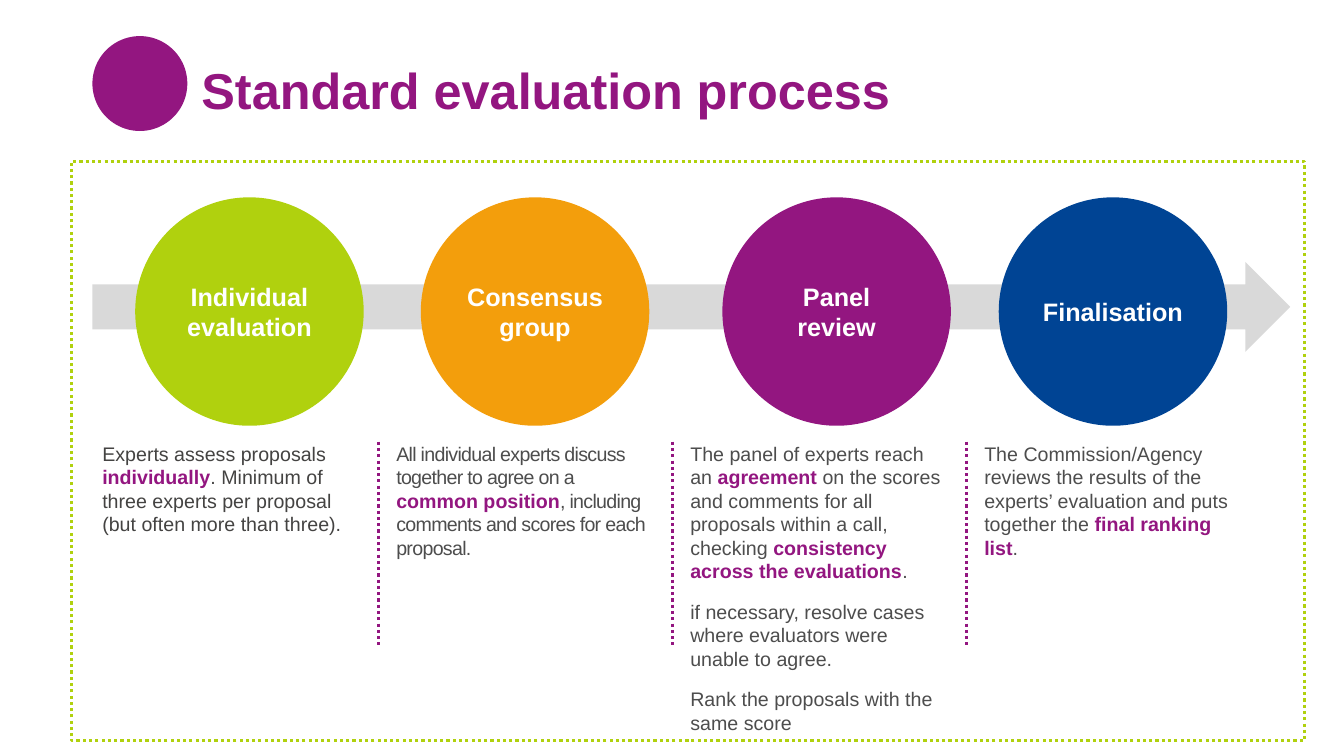
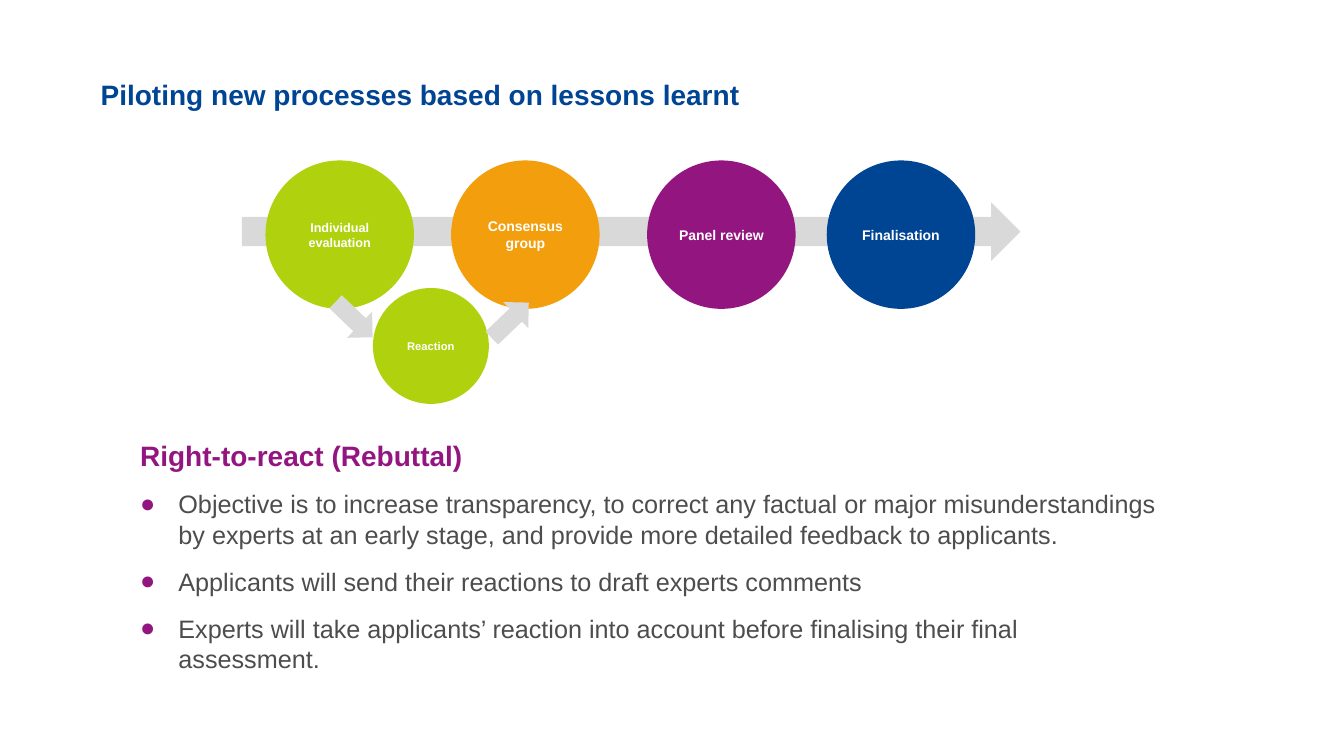
from lxml.etree import SubElement
from pptx import Presentation
from pptx.dml.color import RGBColor
from pptx.enum.dml import MSO_LINE_DASH_STYLE as Dash
from pptx.enum.shapes import MSO_CONNECTOR as Connector, MSO_SHAPE as Shape
from pptx.enum.text import MSO_ANCHOR as Anchor, PP_ALIGN as Align
from pptx.oxml.ns import qn
from pptx.util import Inches, Pt

COLUMNS = 160
FONT = "Arial"
LIME, ORANGE, PURPLE, BLUE = "B0D10E", "F39E0C", "931680", "004494"
GREY, DARK, CHARCOAL, WHITE = "D9D9D9", "4D4D4D", "444342", "FFFFFF"

STAGES = [
    ("Individual evaluation", LIME, 0),
    ("Consensus group", ORANGE, 34),
    ("Panel review", PURPLE, 69.9),
    ("Finalisation", BLUE, 102.8),
]

STAGE_NOTES = [
    (26.4, {"color": CHARCOAL},
     ["Experts assess proposals **individually**. Minimum of three experts "
      "per proposal (but often more than three)."]),
    (30.7, {"spacing": -50},
     ["All individual experts discuss together to agree on a "
      "**common position**, including comments and scores for each proposal."]),
    (36.2, {},
     ["The panel of experts reach an **agreement** on the scores and comments "
      "for all proposals within a call, checking "
      "**consistency across the evaluations**.",
      "if necessary, resolve cases where evaluators were unable to agree.",
      "Rank the proposals with the same score"]),
    (30.7, {},
     ["The Commission/Agency reviews the results of the experts’ evaluation "
      "and puts together the **final ranking list**."]),
]

REBUTTAL_POINTS = [
    "Objective is to increase transparency, to correct any factual or major "
    "misunderstandings by experts at an early stage, and provide more "
    "detailed feedback to applicants.",
    "Applicants will send their reactions to draft experts comments",
    "Experts will take applicants’ reaction into account before finalising "
    "their final assessment.",
]


def rgb(code):
    return RGBColor.from_string(code)


def add_bullet(para):
    properties = para._p.get_or_add_pPr()
    properties.set("marL", str(Inches(0.38)))
    properties.set("indent", str(-Inches(0.38)))
    color = SubElement(properties, qn("a:buClr"))
    SubElement(color, qn("a:srgbClr")).set("val", PURPLE)
    SubElement(properties, qn("a:buFont")).set("typeface", FONT)
    SubElement(properties, qn("a:buChar")).set("char", "●")


def write(para, text, size=14, color=DARK, bold=False, align=Align.LEFT,
          bullet=False, spacing=0, before=0, after=0):
    """Fill a paragraph; words between ** marks become bold and purple."""
    if bullet:
        add_bullet(para)
    para.alignment = align
    para.space_before, para.space_after = Pt(before), Pt(after)
    for index, part in enumerate(text.split("**")):
        strong = index % 2 == 1
        span = para.add_run()
        span.text = part
        span.font.name, span.font.size = FONT, Pt(size)
        span.font.bold = bold or strong
        span.font.color.rgb = rgb(PURPLE if strong else color)
        if spacing and not strong:
            span._r.get_or_add_rPr().set("spc", str(spacing))


class Slides:
    """Keeps the deck, its grid of square cells and the current page."""

    def __init__(self):
        self.deck = Presentation()
        self.deck.slide_width, self.deck.slide_height = Inches(13.33), Inches(7.5)
        self.cell = self.deck.slide_width / COLUMNS
        self.page = None

    def new_page(self):
        self.page = self.deck.slides.add_slide(self.deck.slide_layouts[6])

    def grid(self, *cells):
        return [round(count * self.cell) for count in cells]

    def shape(self, kind, left, top, width, height, fill=None, turn=0):
        shape = self.page.shapes.add_shape(
            kind, *self.grid(left, top, width, height))
        shape.shadow.inherit = False
        shape.line.fill.background()
        shape.rotation = turn
        if fill:
            shape.fill.solid()
            shape.fill.fore_color.rgb = rgb(fill)
        else:
            shape.fill.background()
        return shape

    def arrow(self, left, top, width, height, turn=0):
        self.shape(Shape.RIGHT_ARROW, left, top, width, height, GREY, turn)

    def circle(self, left, top, size, fill, label="", font_size=10, inset=1):
        circle = self.shape(Shape.OVAL, left, top, size, size, fill)
        if label:
            frame = circle.text_frame
            frame.word_wrap = True
            frame.vertical_anchor = Anchor.MIDDLE
            frame.margin_left = frame.margin_right = self.grid(inset)[0]
            write(frame.paragraphs[0], label, size=font_size, color=WHITE,
                  bold=True, align=Align.CENTER)

    def dotted(self, line, color):
        line.color.rgb = rgb(color)
        line.width = Pt(2.25)
        line.dash_style = Dash.ROUND_DOT

    def frame(self, left, top, width, height):
        outline = self.shape(Shape.RECTANGLE, left, top, width, height)
        self.dotted(outline.line, LIME)

    def divider(self, column, top, bottom):
        line = self.page.shapes.add_connector(
            Connector.STRAIGHT, *self.grid(column, top, column, bottom))
        SubElement(line._element.spPr, qn("a:effectLst"))
        self.dotted(line.line, PURPLE)

    def text(self, left, top, width, height, paragraphs):
        """Add a text box from pairs of a text and its format."""
        box = self.page.shapes.add_textbox(*self.grid(left, top, width, height))
        box.text_frame.word_wrap = True
        for index, (content, style) in enumerate(paragraphs):
            if index:
                para = box.text_frame.add_paragraph()
            else:
                para = box.text_frame.paragraphs[0]
                style = {**style, "before": 0}
            write(para, content, **style)

    def title(self, left, top, width, height, content, size, color):
        self.text(left, top, width, height,
                  [(content, {"size": size, "color": color, "bold": True})])

    def process(self, arrow_left, left, top, scale, font_sizes):
        """Draw the four stages in a row on top of a long arrow."""
        self.arrow(arrow_left, top + 7.7 * scale, 142.6 * scale, 10.7 * scale)
        for (label, fill, offset), font_size in zip(STAGES, font_sizes):
            self.circle(left + offset * scale, top, 27.2 * scale, fill,
                        label, font_size, inset=scale)


def standard_process(slides):
    slides.new_page()
    slides.process(11, 16.1, 23.5, 1, [18] * 4)
    for index, (height, style, notes) in enumerate(STAGE_NOTES):
        left = 11 + 35 * index
        style = {"before": 6, "after": 6, **style}
        slides.text(left, 52, 33.1, height, [(note, style) for note in notes])
        if index:
            slides.divider(left - 0.9, 52.6, 77.2)
    slides.title(22.8, 6.4, 126.2, 7.4, "Standard evaluation process", 36, PURPLE)
    slides.circle(11, 4.3, 11.3, PURPLE)
    slides.frame(8.5, 19.2, 146.8, 69)


def piloted_process(slides):
    slides.new_page()
    heading = {"size": 20, "color": PURPLE, "bold": True, "after": 6}
    point = {"size": 18, "bullet": True, "before": 6, "after": 6}
    slides.text(15.5, 51.6, 123.4, 31.6,
                [("Right-to-react (Rebuttal)", heading)]
                + [(content, point) for content in REBUTTAL_POINTS])
    slides.title(10.8, 8.6, 90, 5.3,
                 "Piloting new processes based on lessons learnt", 20, BLUE)
    slides.process(28.8, 31.6, 19.1, 0.65, [9, 10, 10, 10])
    slides.arrow(39.1, 35.9, 6.1, 4.3, turn=43.8)
    slides.circle(44.4, 34.3, 13.8, LIME, "Reaction", 8)
    slides.arrow(57.7, 36, 6.1, 4.3, turn=316.2)


def main():
    slides = Slides()
    standard_process(slides)
    piloted_process(slides)
    slides.deck.save("out.pptx")


if __name__ == "__main__":
    main()
